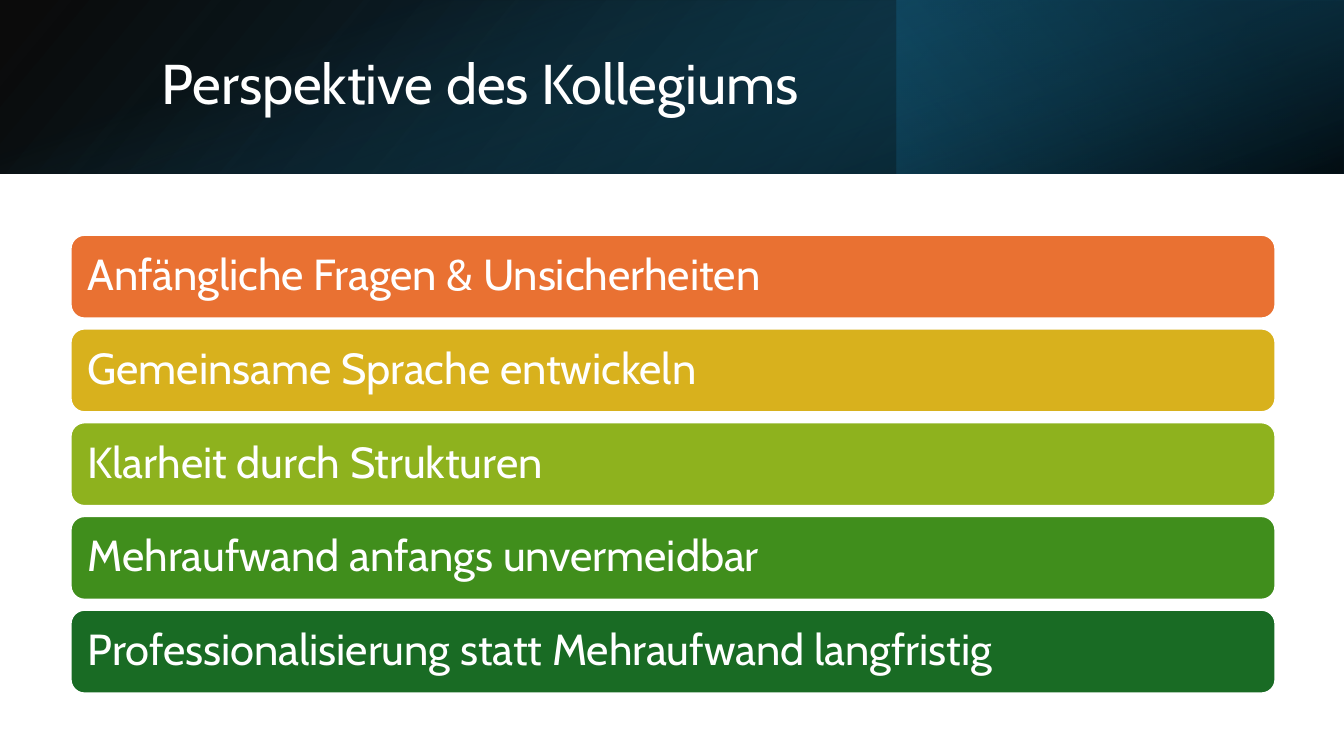
from lxml import etree
from pptx import Presentation
from pptx.dml.color import RGBColor
from pptx.enum import shapes, text
from pptx.oxml.ns import qn
from pptx.util import Inches, Pt

# Content
TITLE = "Perspektive des Kollegiums"
STAGES = [
    ("Anfängliche Fragen & Unsicherheiten", "E97132"),
    ("Gemeinsame Sprache entwickeln", "D8B11D"),
    ("Klarheit durch Strukturen", "8EB21E"),
    ("Mehraufwand anfangs unvermeidbar", "408E1C"),
    ("Professionalisierung statt Mehraufwand langfristig", "196B24"),
]

# Header layers; stops are (position %, colour, opacity %)
HEADER_LAYERS = [
    dict(frame=(0, 0, 13.33, 1.72), rotation=0, flip=True, angle=140,
         stops=[(0, "000000", 96), (100, "104862", 100)]),
    dict(frame=(8.89, 0, 4.44, 1.72), rotation=180, flip=False, angle=320,
         stops=[(19, "0B3041", 68), (100, "156082", 79)]),
    dict(frame=(5.8, -5.8, 1.72, 13.33), rotation=90, flip=False, angle=340,
         stops=[(23, "156082", 0), (99, "000000", 74)]),
]


class Theme:
    font = "Cabin"
    white = "FFFFFF"
    title_size = 40
    stage_size = 31
    outline = 1.5


BAR_LEFT, BAR_TOP, BAR_WIDTH, BAR_HEIGHT = 0.7, 2.33, 11.95, 0.83
BAR_STEP = 0.93
BAR_INSET = 0.13


def add_shape(page, kind, frame):
    shape = page.shapes.add_shape(kind, *map(Inches, frame))
    shape.shadow.inherit = False
    return shape


def add_header_layer(page, frame, rotation, flip, angle, stops):
    layer = add_shape(page, shapes.MSO_SHAPE.RECTANGLE, frame)
    layer.rotation = rotation
    layer.line.fill.background()
    layer.fill.gradient()
    layer.fill.gradient_angle = 360 - angle
    for stop, (position, colour, _) in zip(layer.fill.gradient_stops, stops):
        stop.position = position / 100
        stop.color.rgb = RGBColor.from_string(colour)

    # Opacity and mirroring
    properties = layer._element.spPr
    colours = list(properties.find(qn("a:gradFill")).iter(qn("a:srgbClr")))
    for element, (_, _, opacity) in zip(colours, stops):
        etree.SubElement(element, qn("a:alpha")).set("val", str(opacity * 1000))
    if flip:
        properties.find(qn("a:xfrm")).set("flipH", "1")


def write_text(shape, words, size):
    frame = shape.text_frame
    frame.word_wrap = True
    frame.vertical_anchor = text.MSO_ANCHOR.MIDDLE
    para = frame.paragraphs[0]
    para.text = words
    para.alignment = text.PP_ALIGN.LEFT
    para.line_spacing = 0.9
    para.font.name = Theme.font
    para.font.size = Pt(size)
    para.font.color.rgb = RGBColor.from_string(Theme.white)
    return frame


def add_stage_bar(page, index, words, colour):
    top = BAR_TOP + index * BAR_STEP
    bar = add_shape(page, shapes.MSO_SHAPE.ROUNDED_RECTANGLE,
                    (BAR_LEFT, top, BAR_WIDTH, BAR_HEIGHT))
    bar.fill.solid()
    bar.fill.fore_color.rgb = RGBColor.from_string(colour)
    bar.line.color.rgb = RGBColor.from_string(Theme.white)
    bar.line.width = Pt(Theme.outline)
    frame = write_text(bar, words, Theme.stage_size)
    frame.margin_left = frame.margin_right = Inches(BAR_INSET)
    frame.margin_top = frame.margin_bottom = Inches(BAR_INSET)


def main():
    deck = Presentation()
    deck.slide_width, deck.slide_height = Inches(13.33), Inches(7.5)
    page = deck.slides.add_slide(deck.slide_layouts[6])

    # Header
    for layer in HEADER_LAYERS:
        add_header_layer(page, **layer)
    title = page.shapes.add_textbox(*map(Inches, (1.5, 0.38, 10.98, 0.96)))
    write_text(title, TITLE, Theme.title_size)

    # Stages
    for index, (words, colour) in enumerate(STAGES):
        add_stage_bar(page, index, words, colour)

    deck.save("out.pptx")


if __name__ == "__main__":
    main()
